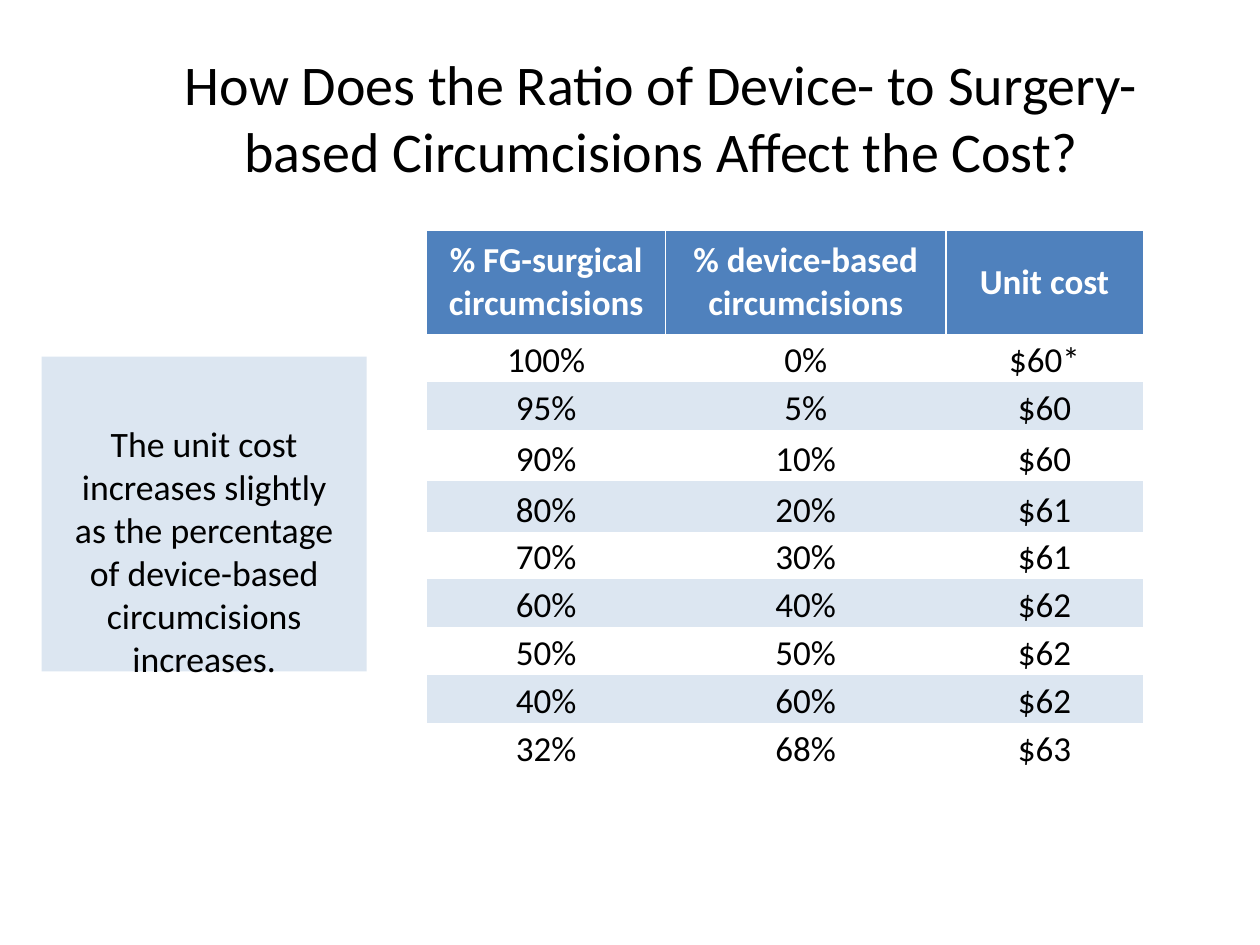
import lxml.etree
import pptx
import pptx.dml.color
import pptx.enum.shapes
import pptx.enum.text
import pptx.oxml
import pptx.oxml.ns
import pptx.util


def color(value):
    return pptx.dml.color.RGBColor.from_string(value)


def write(frame, text, size, anchor, font_color="000000", bold=False):
    frame.word_wrap = True
    frame.vertical_anchor = anchor
    paragraph = frame.paragraphs[0]
    paragraph.text = text
    paragraph.alignment = pptx.enum.text.PP_ALIGN.CENTER
    paragraph.font.name = "Calibri"
    paragraph.font.size = pptx.util.Pt(size)
    paragraph.font.bold = bold
    paragraph.font.color.rgb = color(font_color)


anchors = pptx.enum.text.MSO_ANCHOR
presentation = pptx.Presentation()
presentation.slide_width = pptx.util.Inches(10)
presentation.slide_height = pptx.util.Inches(7.5)
column = presentation.slide_width // 100
row = presentation.slide_height // 75
slide = presentation.slides.add_slide(presentation.slide_layouts[6])

title = slide.shapes.add_textbox(10 * column, 3 * row, 85 * column, int(12.5 * row))
write(title.text_frame,
      "How Does the Ratio of Device- to Surgery-based Circumcisions Affect the Cost?",
      32, anchors.MIDDLE)

callout = slide.shapes.add_shape(
    pptx.enum.shapes.MSO_SHAPE.RECTANGLE,
    int(3.3 * column), int(28.3 * row), int(25.8 * column), 25 * row)
callout.shadow.inherit = False
callout.fill.solid()
callout.fill.fore_color.rgb = color("DCE6F1")
callout.line.fill.background()
callout.text_frame.margin_left = callout.text_frame.margin_right = 2 * column
callout.text_frame.margin_top = int(5.2 * row)
callout.text_frame.margin_bottom = 0
write(callout.text_frame,
      "The unit cost increases slightly as the percentage of device-based circumcisions increases.",
      20.4, anchors.TOP)

cost_rows = [
    ("% FG-surgical circumcisions", "% device-based circumcisions", "Unit cost"),
    ("100%", "0%", "$60*"),
    ("95%", "5%", "$60"),
    ("90%", "10%", "$60"),
    ("80%", "20%", "$61"),
    ("70%", "30%", "$61"),
    ("60%", "40%", "$62"),
    ("50%", "50%", "$62"),
    ("40%", "60%", "$62"),
    ("32%", "68%", "$63"),
]
column_widths = [18.9, 22.3, 15.6]
row_heights = [8.2, 3.8, 3.8, 4.05, 4.05] + [3.8] * 5
table_frame = slide.shapes.add_table(
    len(cost_rows), len(column_widths), int(33.9 * column), int(18.3 * row),
    int(sum(column_widths) * column), int(sum(row_heights) * row))
table = table_frame.table
table.horz_banding = False
style = table_frame.element.find(".//" + pptx.oxml.ns.qn("a:tableStyleId"))
style.text = "{2D5ABB26-0587-4C30-8999-92F81FD0307C}"
for table_column, width in zip(table.columns, column_widths):
    table_column.width = int(width * column)
for table_row, height in zip(table.rows, row_heights):
    table_row.height = int(height * row)

for row_index, values in enumerate(cost_rows):
    header = row_index == 0
    for column_index, value in enumerate(values):
        cell = table.cell(row_index, column_index)
        cell.margin_left = cell.margin_right = cell.margin_top = cell.margin_bottom = 0
        write(cell.text_frame, value, 20, None, "FFFFFF" if header else "000000", header)
        cell.vertical_anchor = anchors.MIDDLE if header else anchors.BOTTOM
        if row_index % 2 and not header:
            cell.fill.background()
        else:
            cell.fill.solid()
            cell.fill.fore_color.rgb = color("4F81BD" if header else "DCE6F1")
        if header:
            sides = ["lnL"] * (column_index > 0) + ["lnR"] * (column_index < 2)
            for position, side in enumerate(sides):
                border = pptx.oxml.parse_xml(
                    f'<a:{side} {pptx.oxml.ns.nsdecls("a")} w="12700"><a:solidFill>'
                    f'<a:srgbClr val="FFFFFF"/></a:solidFill></a:{side}>')
                cell._tc.get_or_add_tcPr().insert(position, border)

presentation.save("out.pptx")
